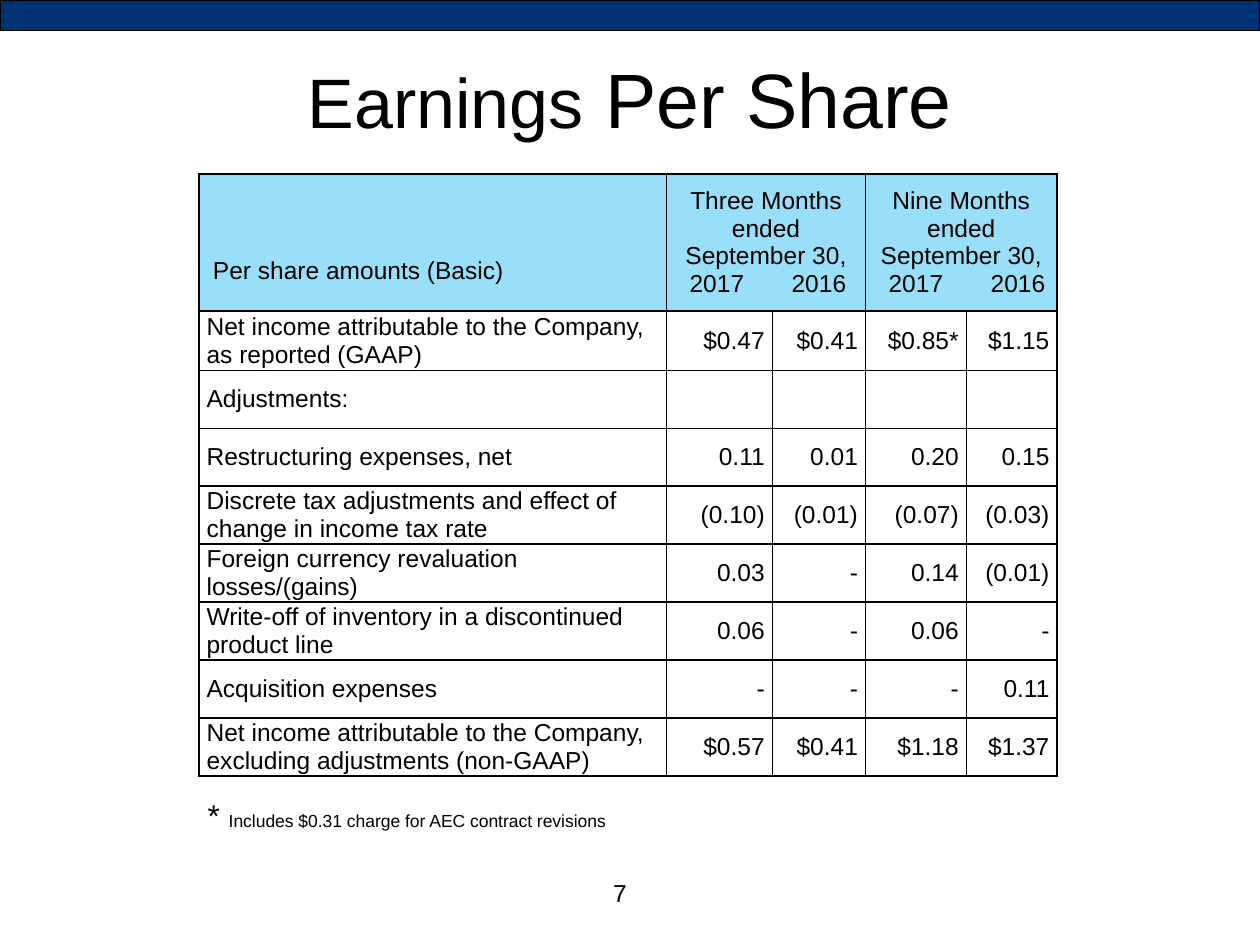
import pptx
import pptx.util
import pptx.dml.color
import pptx.enum.shapes
import pptx.enum.text
import pptx.oxml
import pptx.oxml.ns

Inches = pptx.util.Inches
Pt = pptx.util.Pt
Align = pptx.enum.text.PP_ALIGN
Anchor = pptx.enum.text.MSO_ANCHOR

THEME = {
    "font": "Arial", "ink": "000000", "bar": "003373", "head": "00B0F0",
    "tint": 40, "rule": 1, "big": 44, "title": 40, "body": 14, "star": 18, "note": 10,
}
TITLE = [("Earnings", "title"), (" Per Share", "big")]
LABEL = "Per share amounts (Basic)"
SPANS = ["Three Months ended", "Nine Months ended"]
DATE = "September 30,"
YEARS = "\t2017\t2016"
ROWS = [
    ("Net income attributable to the Company, as reported (GAAP)", "$0.47", "$0.41", "$0.85*", "$1.15"),
    ("Adjustments:", "", "", "", ""),
    ("Restructuring expenses, net", "0.11", "0.01", "0.20", "0.15"),
    ("Discrete tax adjustments and effect of change in income tax rate", "(0.10)", "(0.01)", "(0.07)", "(0.03)"),
    ("Foreign currency revaluation losses/(gains)", "0.03", "-", "0.14", "(0.01)"),
    ("Write-off of inventory in a discontinued product line", "0.06", "-", "0.06", "-"),
    ("Acquisition expenses", "-", "-", "-", "0.11"),
    ("Net income attributable to the Company, excluding adjustments (non-GAAP)", "$0.57", "$0.41", "$1.18", "$1.37"),
]
NOTE = [("* ", "star"), ("Includes $0.31 charge for AEC contract revisions", "note")]
PAGE = [("7", "body")]
WIDTHS = [3.71, 0.84, 0.74, 0.8, 0.72]
HEIGHTS = [1.09, 0.47] + [0.46] * (len(ROWS) - 1)
TABS = [0.34, 1.15]


def color(name):
    return pptx.dml.color.RGBColor.from_string(THEME[name])


def write(para, runs, align):
    para.alignment = align
    for text, size in runs:
        run = para.add_run()
        run.text = text
        run.font.size = Pt(THEME[size])
        run.font.name = THEME["font"]
        run.font.color.rgb = color("ink")


def add_text(slide, box, runs, align):
    frame = slide.shapes.add_textbox(*map(Inches, box)).text_frame
    frame.word_wrap = True
    write(frame.paragraphs[0], runs, align)


def add_tabs(para):
    stops = "".join(f'<a:tab pos="{Inches(stop)}" algn="ctr"/>' for stop in TABS)
    space = pptx.oxml.ns.nsdecls("a")
    para._p.get_or_add_pPr().append(
        pptx.oxml.parse_xml(f"<a:tabLst {space}>{stops}</a:tabLst>"))


def add_rules(cell):
    props = cell._tc.get_or_add_tcPr()
    space = pptx.oxml.ns.nsdecls("a")
    for place, side in enumerate("LRTB"):
        props.insert(place, pptx.oxml.parse_xml(
            f'<a:ln{side} {space} w="{Pt(THEME["rule"])}"><a:solidFill>'
            f'<a:srgbClr val="{THEME["ink"]}"/></a:solidFill></a:ln{side}>'))


def tint_cell(cell):
    cell.fill.solid()
    cell.fill.fore_color.rgb = color("head")
    space = pptx.oxml.ns.nsdecls("a")
    shade = cell._tc.tcPr.find(".//" + pptx.oxml.ns.qn("a:srgbClr"))
    shade.append(pptx.oxml.parse_xml(f'<a:alpha {space} val="{THEME["tint"] * 1000}"/>'))


def set_cell(cell, head):
    cell.margin_left = cell.margin_right = Inches(0.06)
    cell.margin_top = cell.margin_bottom = 0
    cell.vertical_anchor = Anchor.MIDDLE
    if head:
        tint_cell(cell)
    else:
        cell.fill.background()
    add_rules(cell)


def add_grid(slide):
    frame = slide.shapes.add_table(
        len(HEIGHTS), len(WIDTHS), Inches(1.58), Inches(1.38),
        Inches(sum(WIDTHS)), Inches(sum(HEIGHTS)))
    table = frame.table
    table.horz_banding = table.first_row = False
    for col, width in zip(table.columns, WIDTHS):
        col.width = Inches(width)
    for row, height in zip(table.rows, HEIGHTS):
        row.height = Inches(height)
    for r in range(len(HEIGHTS)):
        for c in range(len(WIDTHS)):
            set_cell(table.cell(r, c), r == 0)

    first = table.cell(0, 0)
    first.vertical_anchor = Anchor.BOTTOM
    first.margin_left, first.margin_bottom = Inches(0.11), Inches(0.21)
    write(first.text_frame.paragraphs[0], [(LABEL, "body")], Align.LEFT)
    for i, span in enumerate(SPANS):
        cell = table.cell(0, 1 + 2 * i)
        cell.merge(table.cell(0, 2 + 2 * i))
        text = cell.text_frame
        write(text.paragraphs[0], [(span, "body")], Align.CENTER)
        write(text.add_paragraph(), [(DATE, "body")], Align.CENTER)
        years = text.add_paragraph()
        add_tabs(years)
        write(years, [(YEARS, "body")], Align.LEFT)

    for r, row in enumerate(ROWS, 1):
        for c, text in enumerate(row):
            if text:
                write(table.cell(r, c).text_frame.paragraphs[0], [(text, "body")],
                      Align.RIGHT if c else Align.LEFT)


def main():
    deck = pptx.Presentation()
    deck.slide_width, deck.slide_height = Inches(10), Inches(7.5)
    slide = deck.slides.add_slide(deck.slide_layouts[5])

    bar = slide.shapes.add_shape(
        pptx.enum.shapes.MSO_SHAPE.RECTANGLE, 0, 0, deck.slide_width, Inches(0.24))
    bar.shadow.inherit = False
    bar.fill.solid()
    bar.fill.fore_color.rgb = color("bar")
    bar.line.color.rgb = color("ink")
    bar.line.width = Pt(0.75)

    title = slide.shapes.title
    title.left, title.top, title.width, title.height = map(Inches, (0.5, 0.3, 9, 1.25))
    frame = title.text_frame
    frame.auto_size = pptx.enum.text.MSO_AUTO_SIZE.NONE
    frame.vertical_anchor = Anchor.TOP
    frame.margin_top = Inches(0.11)
    write(frame.paragraphs[0], TITLE, Align.CENTER)

    add_grid(slide)
    add_text(slide, (1.55, 6.27, 3.43, 0.4), NOTE, Align.LEFT)
    add_text(slide, (4.68, 6.92, 0.48, 0.34), PAGE, Align.CENTER)
    deck.save("out.pptx")


if __name__ == "__main__":
    main()
